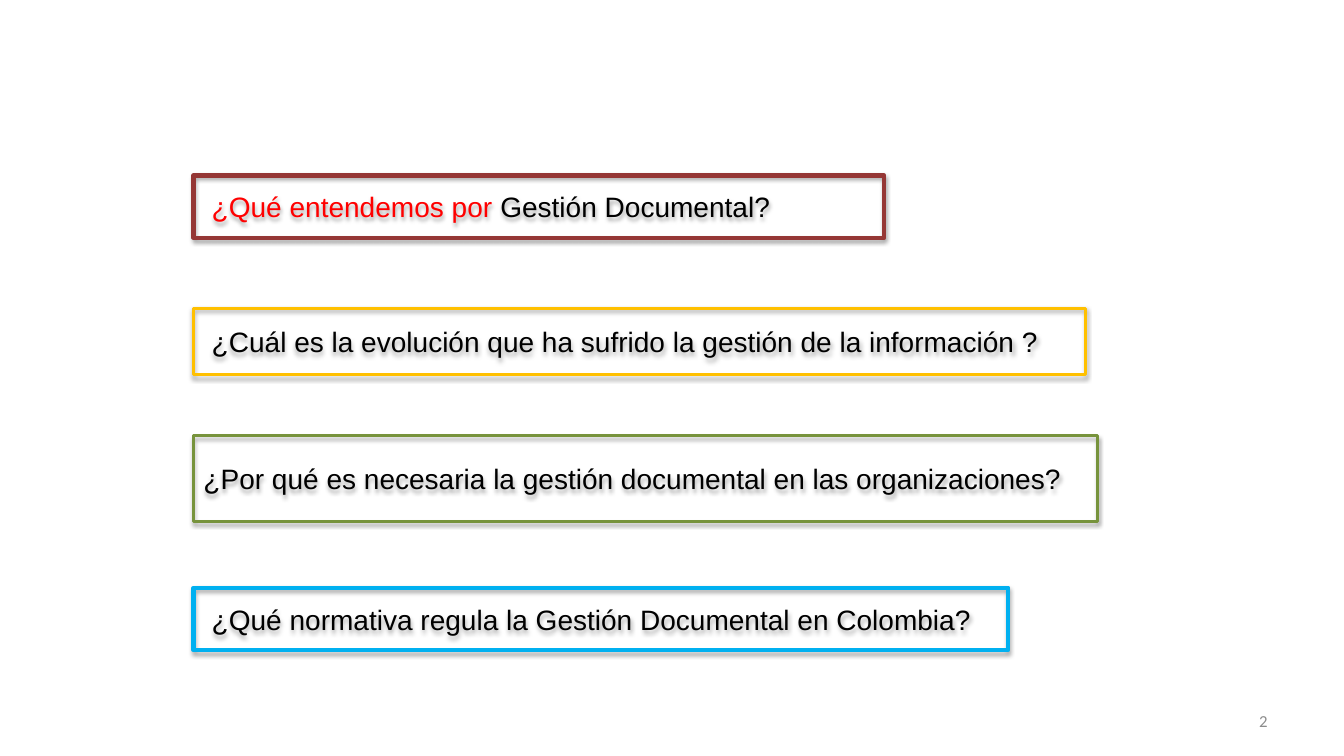
from dataclasses import dataclass

from lxml import etree
from pptx import Presentation
from pptx.dml.color import RGBColor
from pptx.enum.shapes import MSO_SHAPE
from pptx.enum.text import MSO_ANCHOR, PP_ALIGN
from pptx.oxml.ns import qn
from pptx.util import Pt

PX = 9144  # 100 px to the inch
RECT = MSO_SHAPE.RECTANGLE
MIDDLE = MSO_ANCHOR.MIDDLE
LEFT, RIGHT = PP_ALIGN.LEFT, PP_ALIGN.RIGHT

COLORS = {
    "black": "000000",
    "red": "FF0000",
    "brown": "953735",
    "gold": "FFC000",
    "green": "77933C",
    "blue": "00B0F0",
    "gray": "8C8C8C",
}
BOX_X = 192


@dataclass
class Box:
    top: int
    width: int
    height: int
    line: str
    weight: float
    runs: list[tuple[str, str]]
    inset: int = 18


BOXES = [
    Box(174, 685, 62, "brown", 3,
        [("¿Qué entendemos por ", "red"), ("Gestión Documental?", "black")]),
    Box(306, 885, 66, "gold", 2.25,
        [("¿Cuál es la evolución que ha sufrido la gestión de la información ?", "black")]),
    Box(432, 897, 85, "green", 2.25,
        [("¿Por qué es necesaria la gestión documental en las organizaciones?", "black")],
        inset=10),
    Box(583, 808, 62, "blue", 3,
        [("¿Qué normativa regula la Gestión Documental en Colombia?", "black")]),
]


def rgb(name: str) -> RGBColor:
    return RGBColor.from_string(COLORS[name])


def write(shape, runs: list[tuple[str, str]], *, font: str = "Arial",
          size: int = 20, align=LEFT, inset: int = 10) -> None:
    frame = shape.text_frame
    frame.word_wrap = True
    frame.vertical_anchor = MIDDLE
    frame.margin_left = inset * PX
    para = frame.paragraphs[0]
    para.alignment = align
    for text, color in runs:
        run = para.add_run()
        run.text = text
        run.font.name = font
        run.font.size = Pt(size)
        run.font.color.rgb = rgb(color)


def add_shadow(shape) -> None:
    shape.shadow.inherit = False
    effects = shape._element.spPr.find(qn("a:effectLst"))
    outer = etree.SubElement(effects, qn("a:outerShdw"), blurRad="40000",
                             dist="23000", dir="5400000", rotWithShape="0")
    color = etree.SubElement(outer, qn("a:srgbClr"), val=COLORS["black"])
    etree.SubElement(color, qn("a:alpha"), val="35000")


def add_box(slide, box: Box) -> None:
    shape = slide.shapes.add_shape(RECT, BOX_X * PX, box.top * PX,
                                   box.width * PX, box.height * PX)
    shape.fill.background()
    shape.line.color.rgb = rgb(box.line)
    shape.line.width = Pt(box.weight)
    add_shadow(shape)
    write(shape, box.runs, inset=box.inset)


def main() -> None:
    deck = Presentation()
    deck.slide_width, deck.slide_height = 1333 * PX, 750 * PX
    slide = deck.slides.add_slide(deck.slide_layouts[6])

    # Page number
    number = slide.shapes.add_textbox(956 * PX, 695 * PX, 311 * PX, 40 * PX)
    write(number, [("2", "gray")], font="Calibri", size=12, align=RIGHT)

    # Framed questions
    for box in BOXES:
        add_box(slide, box)

    deck.save("out.pptx")


if __name__ == "__main__":
    main()
